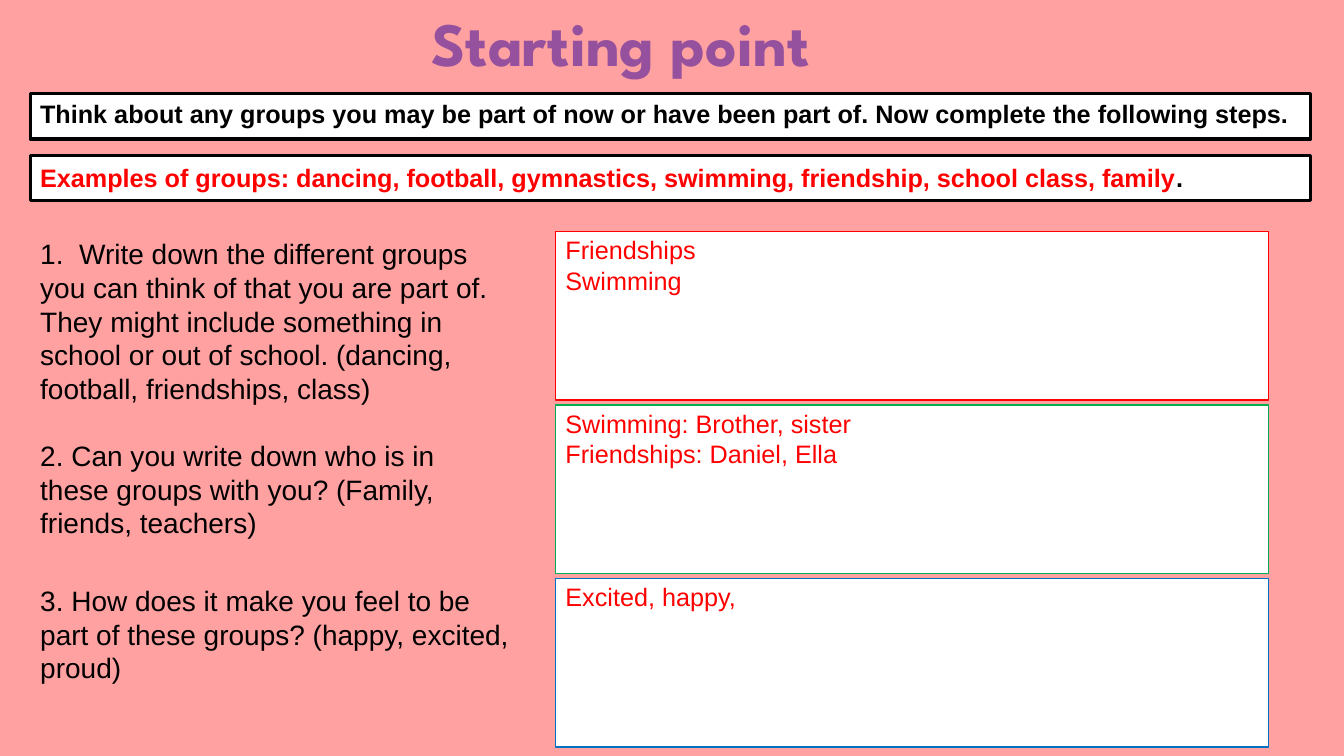
"""Build the "Starting point" slide about the groups a pupil belongs to."""
from pptx import Presentation
from pptx.dml.color import RGBColor as Rgb
from pptx.enum.shapes import MSO_SHAPE as Shape
from pptx.enum.text import MSO_ANCHOR as Anchor, MSO_AUTO_SIZE as Auto, PP_ALIGN as Align
from pptx.util import Inches, Pt

HUES = {
    "back": "FFA1A1", "title": "95519E", "white": "FFFFFF", "black": "000000",
    "red": "FF0000", "green": "00B050", "blue": "0070C0",
}
LEFT, WIDE = 0.3, 12.7
BOX, STEP = 2.3, 1.72


def add_box(at, hue, thick):
    box = slide.shapes.add_shape(Shape.RECTANGLE, *map(Inches, at))
    box.shadow.inherit = False
    box.fill.solid()
    box.fill.fore_color.rgb = Rgb.from_string(HUES["white"])
    box.line.color.rgb = Rgb.from_string(HUES[hue])
    box.line.width = Pt(thick)


def write(frame, lines, size, bold=False, font="Arial", wrap=True):
    frame.word_wrap = wrap
    frame.auto_size = Auto.SHAPE_TO_FIT_TEXT
    frame.vertical_anchor = Anchor.TOP
    for i, line in enumerate(lines):
        para = frame.add_paragraph() if i else frame.paragraphs[0]
        para.alignment = Align.LEFT
        for text, hue in line:
            run = para.add_run()
            run.text = text
            run.font.name = font
            run.font.size = Pt(size)
            run.font.bold = bold
            run.font.color.rgb = Rgb.from_string(HUES[hue])


deck = Presentation()
deck.slide_width, deck.slide_height = Inches(13.33), Inches(7.5)
slide = deck.slides.add_slide(deck.slide_layouts[5])
slide.background.fill.solid()
slide.background.fill.fore_color.rgb = Rgb.from_string(HUES["back"])

title = slide.shapes.title
title.left, title.top = Inches(4.18), Inches(0)
title.width, title.height = Inches(5.85), Inches(0.84)
write(title.text_frame, [[("Starting point", "title")]], 44, True, "League Spartan")

banners = [
    (0.93, 0.93, [("Think about any groups you may be part of now or have been part of. "
                   "Now complete the following steps.", "black")]),
    (1.54, 1.56, [("Examples of groups: dancing, football, gymnastics, swimming, "
                   "friendship, school class, family", "red"), (".", "black")]),
]
for top, base, line in banners:
    add_box((LEFT, top, WIDE, 0.45), "black", 2.25)
    note = slide.shapes.add_textbox(*map(Inches, (LEFT, base, WIDE, 0.4)))
    write(note.text_frame, [line], 18, True)

tasks = [
    (2.3, 4.75, 1.78, "1.  Write down the different groups you can think of that you are "
     "part of. They might include something in school or out of school. "
     "(dancing, football, friendships, class)"),
    (4.3, 4.61, 1.11, "2. Can you write down who is in these groups with you? "
     "(Family, friends, teachers)"),
    (5.74, 5.01, 1.11, "3. How does it make you feel to be part of these groups? "
     "(happy, excited, proud)"),
]
for top, width, height, text in tasks:
    task = slide.shapes.add_textbox(*map(Inches, (LEFT, top, width, height)))
    write(task.text_frame, [[(text, "black")]], 20)

replies = [
    ("red", 1.51, ["Friendships", "Swimming"]),
    ("green", 3.06, ["Swimming: Brother, sister", "Friendships: Daniel, Ella"]),
    ("blue", 1.98, ["Excited, happy,"]),
]
for i, (hue, width, lines) in enumerate(replies):
    top = BOX + i * STEP
    add_box((5.51, top, 7.07, 1.67), hue, 1)
    size = (5.51, top - 0.02, width, 0.1 + 0.3 * len(lines))
    reply = slide.shapes.add_textbox(*map(Inches, size))
    write(reply.text_frame, [[(line, "red")] for line in lines], 18, wrap=False)

deck.save("out.pptx")
